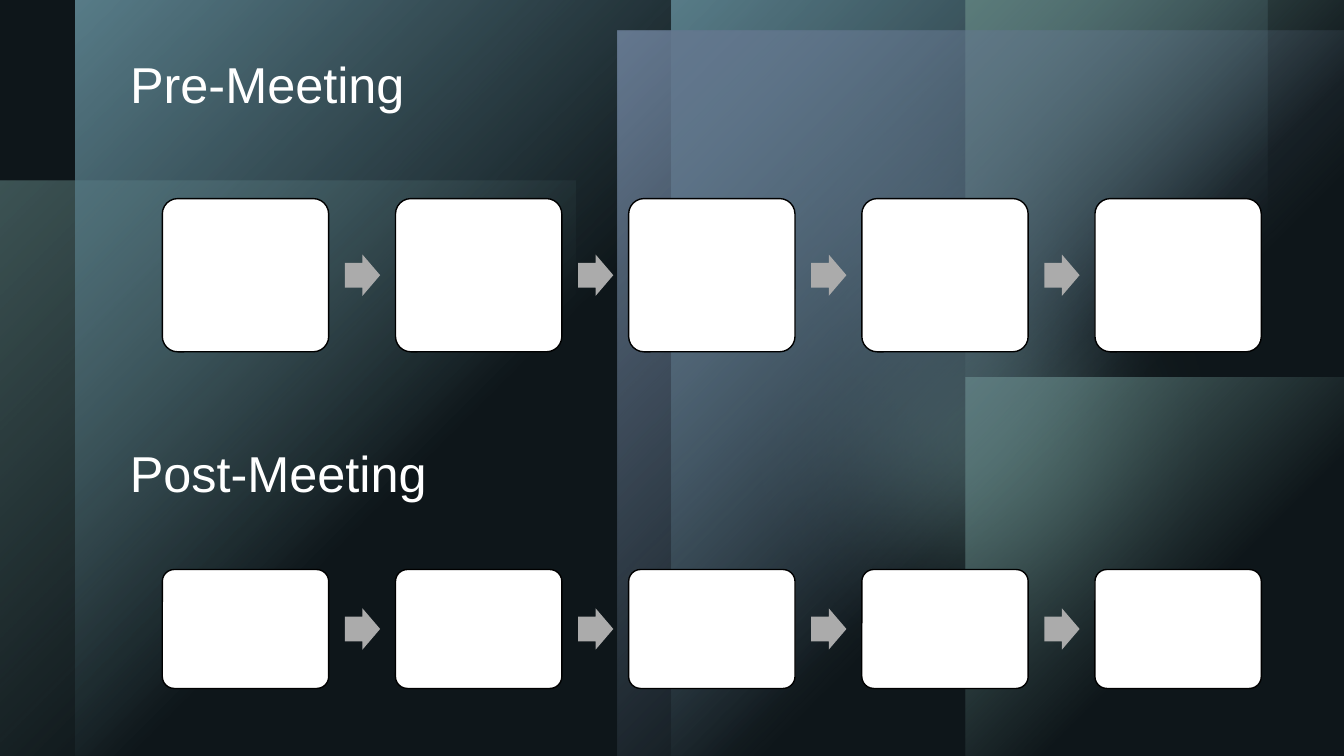
from dataclasses import dataclass

from lxml import etree
from pptx import Presentation
from pptx import util as u
from pptx.dml.color import RGBColor
from pptx.enum import shapes, text
from pptx.oxml import parse_xml
from pptx.oxml.ns import nsdecls, qn


@dataclass(frozen=True)
class Theme:
    font: str = "Arial"
    heading_size: int = 36
    heading: str = "FFFFFF"
    background: str = "000000"
    veil: str = "243841"
    teal: str = "7AA9B7"
    sage: str = "80A9A1"
    slate: str = "8FA2C3"
    card: str = "FFFFFF"
    card_line: str = "000000"
    arrow: str = "ABABAB"


def write(frame, wording, *, font, size, color):
    frame.word_wrap = True
    frame.auto_size = text.MSO_AUTO_SIZE.NONE
    frame.vertical_anchor = text.MSO_ANCHOR.TOP
    paragraph = frame.paragraphs[0]
    paragraph.alignment = text.PP_ALIGN.LEFT
    run = paragraph.add_run()
    run.text = wording
    run.font.name = font
    run.font.size = u.Pt(size)
    run.font.color.rgb = RGBColor.from_string(color)


class Board:
    def __init__(self, slide, theme):
        self.slide = slide
        self.theme = theme
        fill = slide.background.fill
        fill.solid()
        fill.fore_color.rgb = RGBColor.from_string(theme.background)

    def shape(self, kind, box, color=None, alpha=100, line=None):
        item = self.slide.shapes.add_shape(kind, *map(u.Inches, box))
        item.shadow.inherit = False
        if color:
            item.fill.solid()
            item.fill.fore_color.rgb = RGBColor.from_string(color)
            if alpha < 100:
                tint = item.fill._xPr.find(".//" + qn("a:srgbClr"))
                etree.SubElement(tint, qn("a:alpha"), val=str(alpha * 1000))
        if line:
            item.line.color.rgb = RGBColor.from_string(line)
            item.line.width = u.Pt(1)
        else:
            item.line.fill.background()
        return item

    def fading_panel(self, box, color, alpha=100):
        panel = self.shape(shapes.MSO_SHAPE.RECTANGLE, box)
        gradient = parse_xml(
            f'<a:gradFill {nsdecls("a")} rotWithShape="0"><a:gsLst>'
            f'<a:gs pos="0"><a:srgbClr val="{color}"><a:alpha val="{alpha * 1000}"/></a:srgbClr></a:gs>'
            f'<a:gs pos="60000"><a:srgbClr val="{color}"><a:alpha val="0"/></a:srgbClr></a:gs>'
            '</a:gsLst><a:path path="circle"><a:fillToRect r="100000" b="100000"/></a:path></a:gradFill>'
        )
        panel._element.spPr.find(qn("a:prstGeom")).addnext(gradient)

    def glow(self, box, color, alpha):
        disc = self.shape(shapes.MSO_SHAPE.OVAL, box, color, alpha)
        effects = disc._element.spPr.find(qn("a:effectLst"))
        etree.SubElement(effects, qn("a:softEdge"), rad=str(u.Pt(100)))

    def heading(self, wording, top, holder=None):
        box = [u.Inches(side) for side in (1.19, top, 6.67, 0.71)]
        if holder is None:
            holder = self.slide.shapes.add_textbox(*box)
        else:
            holder.left, holder.top, holder.width, holder.height = box
            self.slide.shapes._spTree.append(holder._element)
        style = self.theme
        write(holder.text_frame, wording, font=style.font,
              size=style.heading_size, color=style.heading)

    def process(self, top, height, steps=5):
        first, last, card_width = 1.61, 10.86, 1.65
        arrow_width, arrow_height = 0.35, 0.41
        pitch = (last - first) / (steps - 1)
        for step in range(steps):
            left = first + step * pitch
            card = self.shape(shapes.MSO_SHAPE.ROUNDED_RECTANGLE,
                              (left, top, card_width, height),
                              self.theme.card, line=self.theme.card_line)
            card.adjustments[0] = 0.1
            if step < steps - 1:
                arrow = self.shape(
                    shapes.MSO_SHAPE.RIGHT_ARROW,
                    (left + 1.81, top + (height - arrow_height) / 2, arrow_width, arrow_height),
                    self.theme.arrow)
                arrow.adjustments[0] = 0.6
                arrow.adjustments[1] = 0.5

    def backdrop(self):
        style = self.theme
        self.fading_panel((0, 1.79, 5.71, 5.71), style.sage, 60)
        self.glow((6.98, 0, 4.72, 4.72), style.slate, 96)
        self.glow((6.69, 1.35, 6.02, 6.02), style.sage, 60)
        for left in (6.66, 0.75):
            self.fading_panel((left, 0, 5.91, 7.5), style.teal)
        for top in (3.75, 0):
            self.fading_panel((9.58, top, 3.75, 3.75), style.sage)
        self.fading_panel((6.13, 0.3, 7.2, 7.2), style.slate)
        self.shape(shapes.MSO_SHAPE.RECTANGLE, (0, 0, 13.33, 7.5), style.veil, 40)


def main():
    deck = Presentation()
    deck.slide_width, deck.slide_height = u.Inches(13.33), u.Inches(7.5)
    slide = deck.slides.add_slide(deck.slide_layouts[5])
    board = Board(slide, Theme())
    board.backdrop()
    board.heading("Pre-Meeting", 0.48, slide.shapes.title)
    board.process(1.97, 1.52)
    board.heading("Post-Meeting", 4.34)
    board.process(5.65, 1.18)
    deck.save("out.pptx")


if __name__ == "__main__":
    main()
